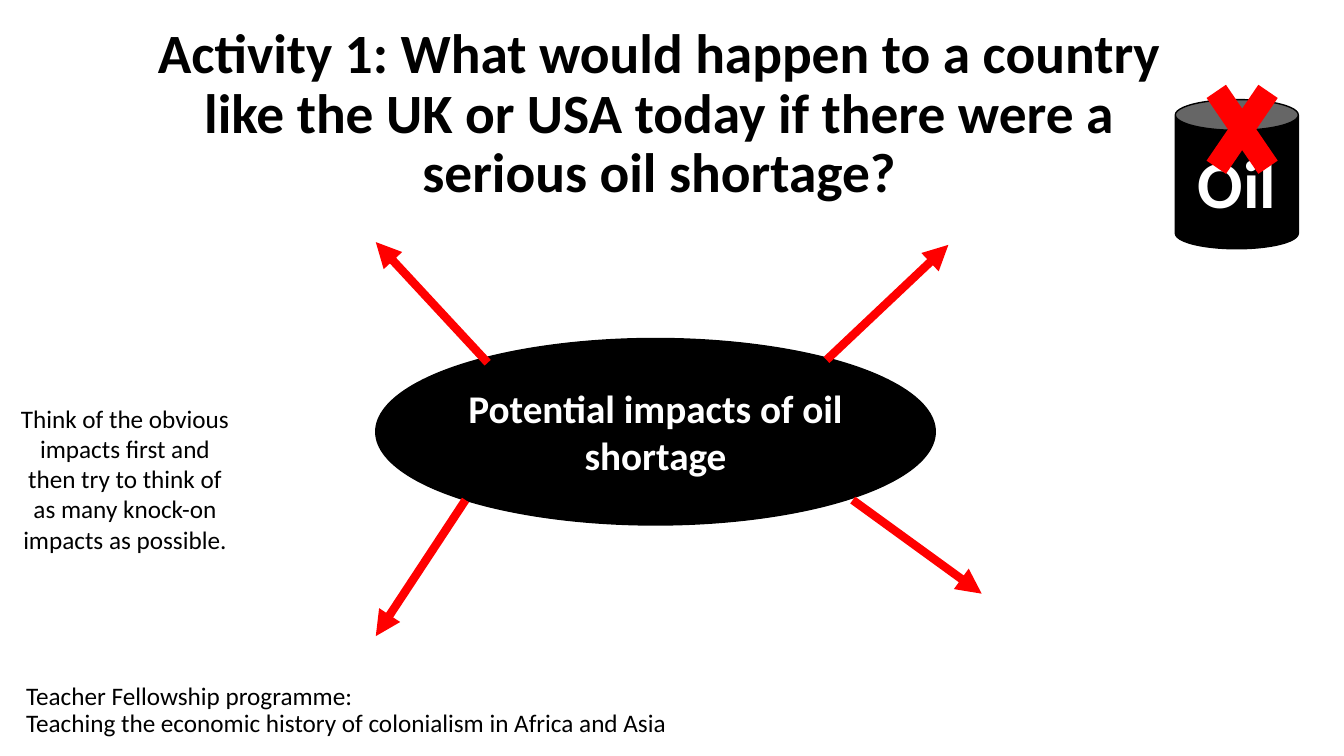
import pptx
import pptx.util
import pptx.dml.color
import pptx.enum.shapes
import pptx.enum.text
import pptx.oxml
import pptx.oxml.ns
from dataclasses import dataclass

Cm, Pt = pptx.util.Cm, pptx.util.Pt
Shape = pptx.enum.shapes.MSO_SHAPE
Align = pptx.enum.text.PP_ALIGN
Anchor = pptx.enum.text.MSO_ANCHOR


@dataclass(frozen=True)
class Theme:
    """Colours, font and type sizes of the slide."""
    font: str = "Calibri"
    ink: str = "000000"
    pale: str = "FFFFFF"
    red: str = "FF0000"
    body: float = 18
    hub: float = 28
    title: float = 39.6
    label: float = 48
    edge: float = 1
    arrow: float = 6


def rgb(code):
    """Turn a hex code into a colour."""
    return pptx.dml.color.RGBColor.from_string(code)


def write(frame, text, *, font, size, color, bold=False, align=Align.CENTER,
          anchor=Anchor.MIDDLE, space=None):
    """Fill a text frame, one paragraph for each line of text."""
    frame.word_wrap = True
    frame.vertical_anchor = anchor
    for i, line in enumerate(text.split("\n")):
        para = frame.add_paragraph() if i else frame.paragraphs[0]
        para.alignment = align
        para.line_spacing = space
        run = para.add_run()
        run.text = line
        run.font.name = font
        run.font.size = Pt(size)
        run.font.bold = bold
        run.font.color.rgb = rgb(color)


class Board:
    """Hold the theme and the slide, and draw elements on it."""

    def __init__(self, slide, theme):
        """Keep the slide and its theme."""
        self.slide, self.theme = slide, theme

    def text(self, box, text, size, **form):
        """Add a text box."""
        item = self.slide.shapes.add_textbox(*map(Cm, box))
        write(item.text_frame, text, font=self.theme.font, size=size,
              color=self.theme.ink, **form)

    def shape(self, kind, box, fill, text="", size=None, line=None):
        """Add a preset shape with an optional bold label."""
        item = self.slide.shapes.add_shape(kind, *map(Cm, box))
        item.shadow.inherit = False
        item.fill.solid()
        item.fill.fore_color.rgb = rgb(fill)
        if line:
            item.line.color.rgb = rgb(line)
            item.line.width = Pt(self.theme.edge)
        else:
            item.line.fill.background()
        if text:
            write(item.text_frame, text, font=self.theme.font, size=size,
                  color=self.theme.pale, bold=True)

    def arrow(self, start, end):
        """Add a thick red arrow."""
        item = self.slide.shapes.add_connector(
            pptx.enum.shapes.MSO_CONNECTOR.STRAIGHT, *map(Cm, start + end))
        item.line.color.rgb = rgb(self.theme.red)
        item.line.width = Pt(self.theme.arrow)
        make, name = pptx.oxml.ns.qn, pptx.oxml.xmlchemy.OxmlElement
        head = name("a:tailEnd")
        head.set("type", "triangle")
        props = item._element.spPr
        props.find(make("a:ln")).append(head)
        props.append(name("a:effectLst"))


def main():
    """Build the slide and save it."""
    deck = pptx.Presentation()
    deck.slide_width, deck.slide_height = Cm(33.87), Cm(19.05)
    theme = Theme()
    board = Board(deck.slides.add_slide(deck.slide_layouts[6]), theme)

    board.text((0.41, 16.87, 17.22, 2.08),
               "Teacher Fellowship programme:\n"
               "Teaching the economic history of colonialism in Africa and Asia",
               theme.body, align=Align.LEFT, space=0.9)
    board.text((3.61, 1.02, 26.01, 3.76),
               "Activity 1: What would happen to a country like the UK or USA "
               "today if there were a serious oil shortage?",
               theme.title, bold=True, space=0.9)
    board.shape(Shape.OVAL, (9.47, 8.53, 14.1, 4.7), theme.ink,
                "Potential impacts of oil shortage", theme.hub, theme.ink)
    for start, end in (
        ((20.83, 9.07), (23.9, 6.17)),
        ((12.29, 9.14), (9.47, 6.1)),
        ((11.73, 12.6), (9.47, 16.03)),
        ((21.49, 12.6), (24.74, 14.96)),
    ):
        board.arrow(start, end)
    board.shape(Shape.CAN, (29.62, 2.51, 3.1, 3.76), theme.ink,
                "Oil", theme.label, theme.ink)
    board.shape(Shape.MATH_MULTIPLY, (30.05, 1.42, 2.51, 3.68), theme.red)
    board.text((0.23, 10.03, 5.84, 4.11),
               "Think of the obvious impacts first and then try to think of "
               "as many knock-on impacts as possible.",
               theme.body, anchor=Anchor.TOP)
    deck.save("out.pptx")


if __name__ == "__main__":
    main()
